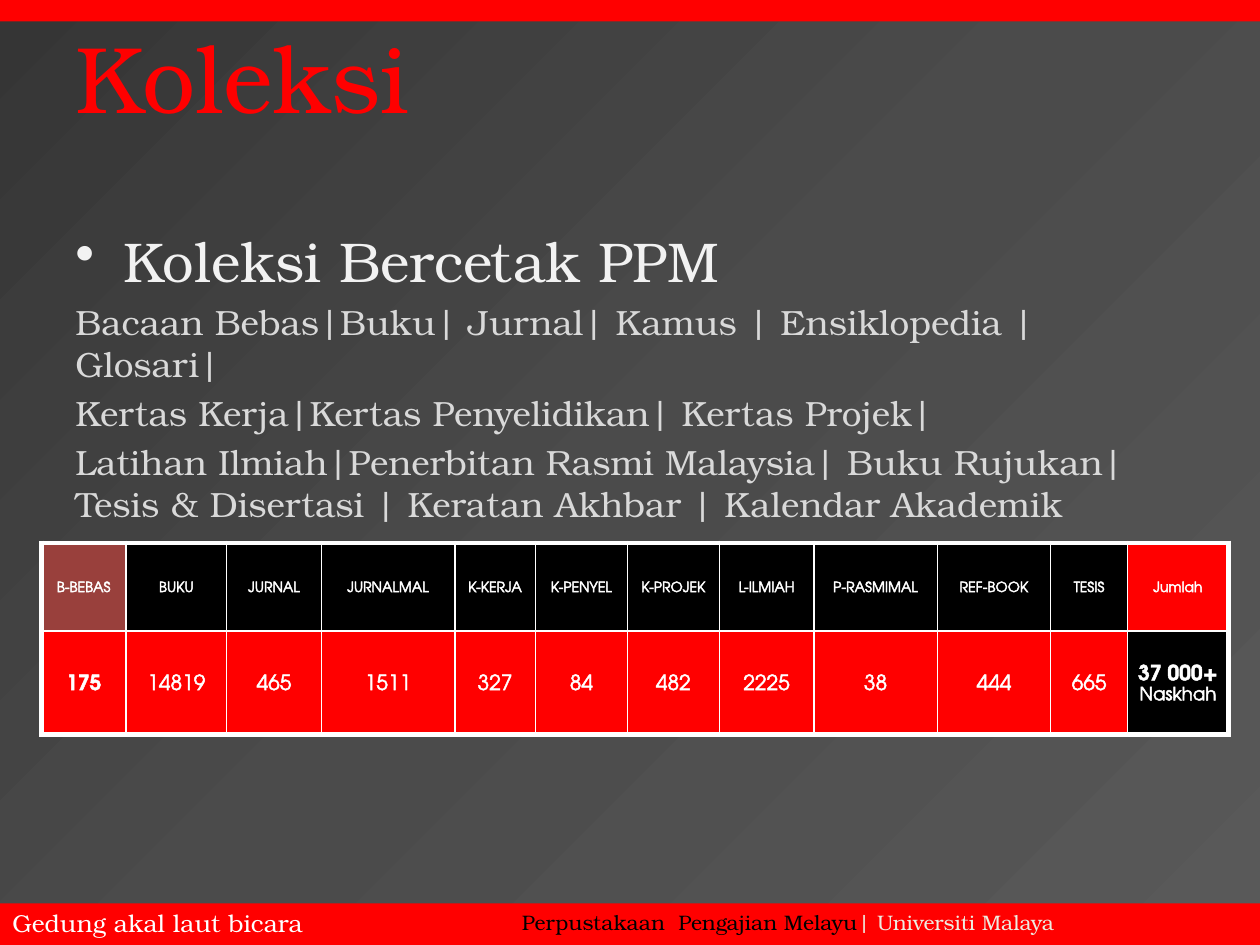
import copy
from dataclasses import dataclass

import pptx
import pptx.dml.color
import pptx.enum.shapes
import pptx.enum.text
import pptx.oxml
import pptx.oxml.ns
import pptx.util

Inches = pptx.util.Inches
Pt = pptx.util.Pt
RGB = pptx.dml.color.RGBColor.from_string
ALIGN = pptx.enum.text.PP_ALIGN
ANCHOR = pptx.enum.text.MSO_ANCHOR
GROW = pptx.enum.text.MSO_AUTO_SIZE.SHAPE_TO_FIT_TEXT
RECT = pptx.enum.shapes.MSO_SHAPE.RECTANGLE
NS = pptx.oxml.ns.nsdecls("a")


@dataclass(frozen=True)
class Theme:
    serif: str = "TeX Gyre Bonum"
    sans: str = "TeX Gyre Adventor"
    red: str = "FF0000"
    maroon: str = "99403C"
    black: str = "000000"
    white: str = "FFFFFF"
    heading: str = "F2F2F2"
    body: str = "D9D9D9"
    cream: str = "EEECE1"
    backdrop: tuple = ((0, "353535"), (0.5, "4B4B4B"), (1, "595959"))
    title_size: float = 54
    heading_size: float = 32
    body_size: float = 20
    motto_size: float = 14
    footer_size: float = 12
    header_size: float = 8
    value_size: float = 12
    unit_size: float = 10.5
    outer_line: float = 3
    inner_line: float = 1


T = Theme()

COLLECTIONS = [
    "Bacaan Bebas|Buku| Jurnal| Kamus | Ensiklopedia | Glosari|",
    "Kertas Kerja|Kertas Penyelidikan| Kertas Projek|",
    "Latihan Ilmiah|Penerbitan Rasmi Malaysia| Buku Rujukan|"
    "Tesis & Disertasi | Keratan Akhbar | Kalendar Akademik",
]
# label, value, column width
HOLDINGS = [
    ("B-BEBAS", "175", 0.67), ("BUKU", "14819", 0.8), ("JURNAL", "465", 0.75),
    ("JURNALMAL", "1511", 1.06), ("K-KERJA", "327", 0.64), ("K-PENYEL", "84", 0.73),
    ("K-PROJEK", "482", 0.73), ("L-ILMIAH", "2225", 0.75), ("P-RASMIMAL", "38", 0.98),
    ("REF-BOOK", "444", 0.9), ("TESIS", "665", 0.61), ("Jumlah", "37 000+", 0.8),
]
ROW_HEIGHTS = (0.7, 0.82)


def set_all(obj, **values):
    for name, value in values.items():
        setattr(obj, name, value)


def add_run(p, text, size, color, font=T.serif, bold=False):
    r = p.add_run()
    r.text = text
    set_all(r.font, name=font, size=Pt(size), bold=bold)
    r.font.color.rgb = RGB(color)
    return r


def add_rect(s, x, y, w, h):
    sp = s.shapes.add_shape(RECT, Inches(x), Inches(y), Inches(w), Inches(h))
    sp.shadow.inherit = False
    sp.line.fill.background()
    return sp


def add_backdrop(s):
    sp = add_rect(s, 0, -0.01, 10, 7.5)
    sp.fill.gradient()
    sp.fill.gradient_angle = 315
    first = sp.fill.gradient_stops[0]._gs
    first.addnext(copy.deepcopy(first))
    for stop, (position, color) in zip(sp.fill.gradient_stops, T.backdrop):
        stop.position = position
        stop.color.rgb = RGB(color)


def add_band(s, y, h):
    sp = add_rect(s, 0, y, 10, h)
    sp.fill.solid()
    sp.fill.fore_color.rgb = RGB(T.red)


def add_text(s, x, y, w, h, **frame):
    tf = s.shapes.add_textbox(Inches(x), Inches(y), Inches(w), Inches(h)).text_frame
    set_all(tf, word_wrap=True, **frame)
    return tf


def add_bullet(p):
    pPr = p._p.get_or_add_pPr()
    for name, value in {"marL": Inches(0.38), "indent": Inches(-0.38)}.items():
        pPr.set(name, str(value))
    pPr.append(pptx.oxml.parse_xml(f'<a:buChar {NS} char="•"/>'))


def add_body(s):
    tf = add_text(s, 0.5, 1.75, 9, 4.95)
    p = tf.paragraphs[0]
    p.space_before = Pt(T.heading_size * 0.2)
    add_bullet(p)
    add_run(p, "Koleksi Bercetak PPM", T.heading_size, T.heading)
    for line in COLLECTIONS:
        p = tf.add_paragraph()
        p.space_before = Pt(T.body_size * 0.2)
        add_run(p, line, T.body_size, T.body)


def line_xml(tag, width):
    return pptx.oxml.parse_xml(
        f'<a:{tag} {NS} w="{Pt(width)}"><a:solidFill>'
        f'<a:srgbClr val="{T.white}"/></a:solidFill></a:{tag}>')


def format_cell(cell, color, outer_sides):
    set_all(cell, vertical_anchor=ANCHOR.MIDDLE, margin_left=Inches(0.07),
            margin_right=Inches(0.07), margin_top=0, margin_bottom=0)
    tcPr = cell._tc.get_or_add_tcPr()
    for side in "LRTB":
        width = T.outer_line if side in outer_sides else T.inner_line
        tcPr.append(line_xml(f"ln{side}", width))
    cell.fill.solid()
    cell.fill.fore_color.rgb = RGB(color)


def write_cell(p, text, size, bold=False):
    set_all(p, alignment=ALIGN.CENTER, line_spacing=1.15)
    r = add_run(p, text, size, T.white, T.sans, bold)
    r._r.get_or_add_rPr().insert(0, line_xml("ln", 0.75))


def add_holdings(s):
    last = len(HOLDINGS) - 1
    table = s.shapes.add_table(2, len(HOLDINGS), Inches(0.33), Inches(4.31),
                               Inches(9.42), Inches(sum(ROW_HEIGHTS))).table
    for row, height in zip(table.rows, ROW_HEIGHTS):
        row.height = Inches(height)
    for i, (label, value, width) in enumerate(HOLDINGS):
        table.columns[i].width = Inches(width)
        edge = {0: "L", last: "R"}.get(i, "")
        head, body = table.cell(0, i), table.cell(1, i)
        format_cell(head, {0: T.maroon, last: T.red}.get(i, T.black), "T" + edge)
        format_cell(body, T.black if i == last else T.red, "B" + edge)
        write_cell(head.text_frame.paragraphs[0], label, T.header_size)
        write_cell(body.text_frame.paragraphs[0], value, T.value_size, i in (0, last))
    write_cell(table.cell(1, last).text_frame.add_paragraph(), "Naskhah", T.unit_size)


def main():
    prs = pptx.Presentation()
    set_all(prs, slide_width=Inches(10), slide_height=Inches(7.5))
    s = prs.slides.add_slide(prs.slide_layouts[6])
    add_backdrop(s)
    add_band(s, 0, 0.17)
    add_band(s, 7.17, 0.33)

    motto = add_text(s, 0, 7.16, 5.17, 0.34, auto_size=GROW)
    add_run(motto.paragraphs[0], "Gedung akal laut bicara", T.motto_size, T.white)
    title = add_text(s, 0.5, 0.3, 9, 1.25, vertical_anchor=ANCHOR.MIDDLE,
                     margin_bottom=Inches(0.7))
    add_run(title.paragraphs[0], "Koleksi", T.title_size, T.red)
    add_body(s)

    p = add_text(s, 3.17, 7.17, 6.17, 0.3, auto_size=GROW).paragraphs[0]
    p.alignment = ALIGN.CENTER
    add_run(p, "Perpustakaan  Pengajian Melayu", T.footer_size, T.black)
    add_run(p, "| Universiti Malaya", T.footer_size, T.cream)
    add_holdings(s)
    prs.save("out.pptx")


if __name__ == "__main__":
    main()
